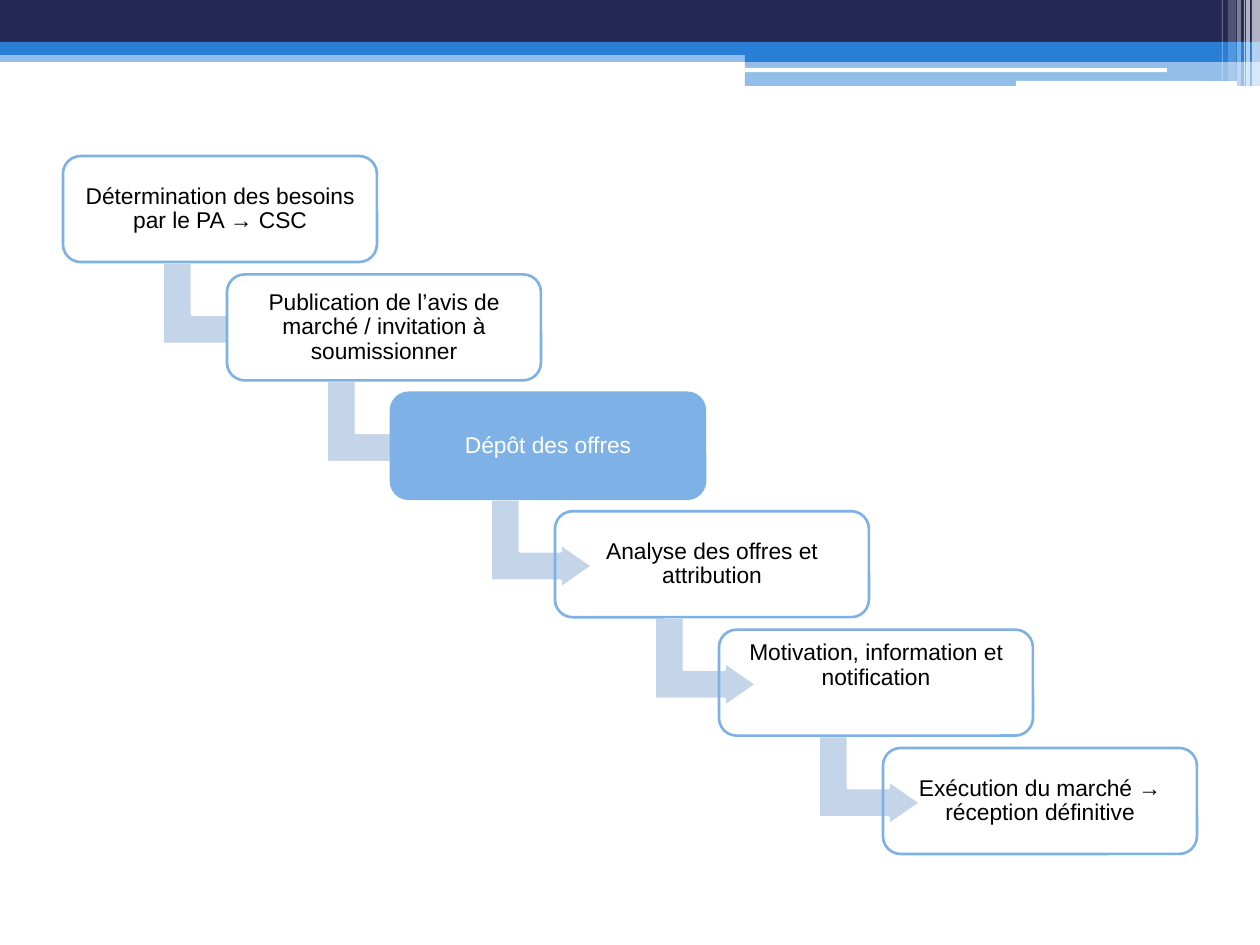
from lxml.etree import SubElement
from pptx import Presentation
from pptx.dml.color import RGBColor
from pptx.enum.shapes import MSO_SHAPE
from pptx.enum.text import MSO_ANCHOR, PP_ALIGN
from pptx.oxml.ns import qn
from pptx.util import Pt

PX = 914400 // 126
WIDTH, HEIGHT = 1260, 945

NAVY = RGBColor(0x24, 0x28, 0x52)
BLUE = RGBColor(0x29, 0x7F, 0xD5)
SKY = RGBColor(0x7E, 0xB2, 0xE6)
PALE = RGBColor(0xC5, 0xD5, 0xE9)
WHITE = RGBColor(0xFF, 0xFF, 0xFF)
BLACK = RGBColor(0x00, 0x00, 0x00)

RECTANGLE, ROUNDED = MSO_SHAPE.RECTANGLE, MSO_SHAPE.ROUNDED_RECTANGLE

# kind, (left, top, width, height), colour, opacity in percent
BANNER = [
    (RECTANGLE, (0, 50, 1260, 12), BLUE, 50),
    (RECTANGLE, (0, 0, 1260, 43), NAVY, 100),
    (RECTANGLE, (0, 42, 1260, 13), BLUE, 100),
    (RECTANGLE, (745, 49, 515, 13), BLUE, 100),
    (RECTANGLE, (745, 61, 515, 25), BLUE, 50),
    (ROUNDED, (745, 68, 422, 4), WHITE, 100),
    (ROUNDED, (1016, 81, 221, 5), WHITE, 100),
]
# left, width, height, opacity in percent
STRIPES = [
    (1252, 8, 86, 65),
    (1246, 4, 86, 65),
    (1244, 1, 86, 60),
    (1237, 4, 86, 40),
    (1228, 8, 81, 20),
    (1222, 1, 81, 30),
]

# text, box fill, text colour, bottom inset
STEPS = [
    ("Détermination des besoins par le PA → CSC", None, BLACK, 12),
    ("Publication de l’avis de marché / invitation à soumissionner", WHITE, BLACK, 12),
    ("Dépôt des offres", SKY, WHITE, 12),
    ("Analyse des offres et attribution", None, BLACK, 12),
    ("Motivation, information et notification", None, BLACK, 46),
    ("Exécution du marché → réception définitive", None, BLACK, 12),
]
FIRST_BOX, LAST_BOX = (63, 156), (883, 748)
BOX_SIZE = (314, 106)
ARROW_OFFSET = (106, 100)
ARROW_SIZE = (89, 102)
ARROW_ADJUSTMENTS = (0.33, 0.25, 0.36)
INSET = 12


def add_shape(slide, kind, frame, fill=None, line=None, opacity=100):
    shape = slide.shapes.add_shape(kind, *(round(length * PX) for length in frame))
    shape.shadow.inherit = False
    if fill is None:
        shape.fill.background()
    else:
        shape.fill.solid()
        shape.fill.fore_color.rgb = fill
        if opacity < 100:
            color = shape.fill._xPr.find(qn("a:solidFill"))[0]
            SubElement(color, qn("a:alpha"), val=str(opacity * 1000))
    if line is None:
        shape.line.fill.background()
    else:
        shape.line.color.rgb = line
        shape.line.width = Pt(1.5)
    return shape


def write_label(shape, text, color, bottom_inset):
    text_frame = shape.text_frame
    text_frame.word_wrap = True
    text_frame.vertical_anchor = MSO_ANCHOR.MIDDLE
    text_frame.margin_left = text_frame.margin_right = text_frame.margin_top = INSET * PX
    text_frame.margin_bottom = bottom_inset * PX
    text_frame.text = text
    paragraph = text_frame.paragraphs[0]
    paragraph.alignment = PP_ALIGN.CENTER
    paragraph.line_spacing = 0.9
    font = paragraph.runs[0].font
    font.name = "Arial"
    font.size = Pt(13)
    font.color.rgb = color


def add_banner(slide):
    for kind, frame, color, opacity in BANNER:
        add_shape(slide, kind, frame, color, opacity=opacity)
    for left, width, height, opacity in STRIPES:
        add_shape(slide, RECTANGLE, (left, 0, width, height), WHITE, opacity=opacity)


def add_staircase(slide):
    """Place the boxes evenly from first to last, each arrow behind its box."""
    last = len(STEPS) - 1
    for index, (text, fill, color, bottom_inset) in enumerate(STEPS):
        left, top = (start + (end - start) * index / last
                     for start, end in zip(FIRST_BOX, LAST_BOX))
        if index < last:
            frame = (left + ARROW_OFFSET[0], top + ARROW_OFFSET[1], *ARROW_SIZE)
            arrow = add_shape(slide, MSO_SHAPE.BENT_UP_ARROW, frame, PALE, WHITE)
            arrow.rotation = 90
            for number, value in enumerate(ARROW_ADJUSTMENTS):
                arrow.adjustments[number] = value
        box = add_shape(slide, ROUNDED, (left, top, *BOX_SIZE), fill, SKY)
        write_label(box, text, color, bottom_inset)


def main():
    presentation = Presentation()
    presentation.slide_width = WIDTH * PX
    presentation.slide_height = HEIGHT * PX
    slide = presentation.slides.add_slide(presentation.slide_layouts[6])
    add_banner(slide)
    add_staircase(slide)
    presentation.save("out.pptx")


if __name__ == "__main__":
    main()
